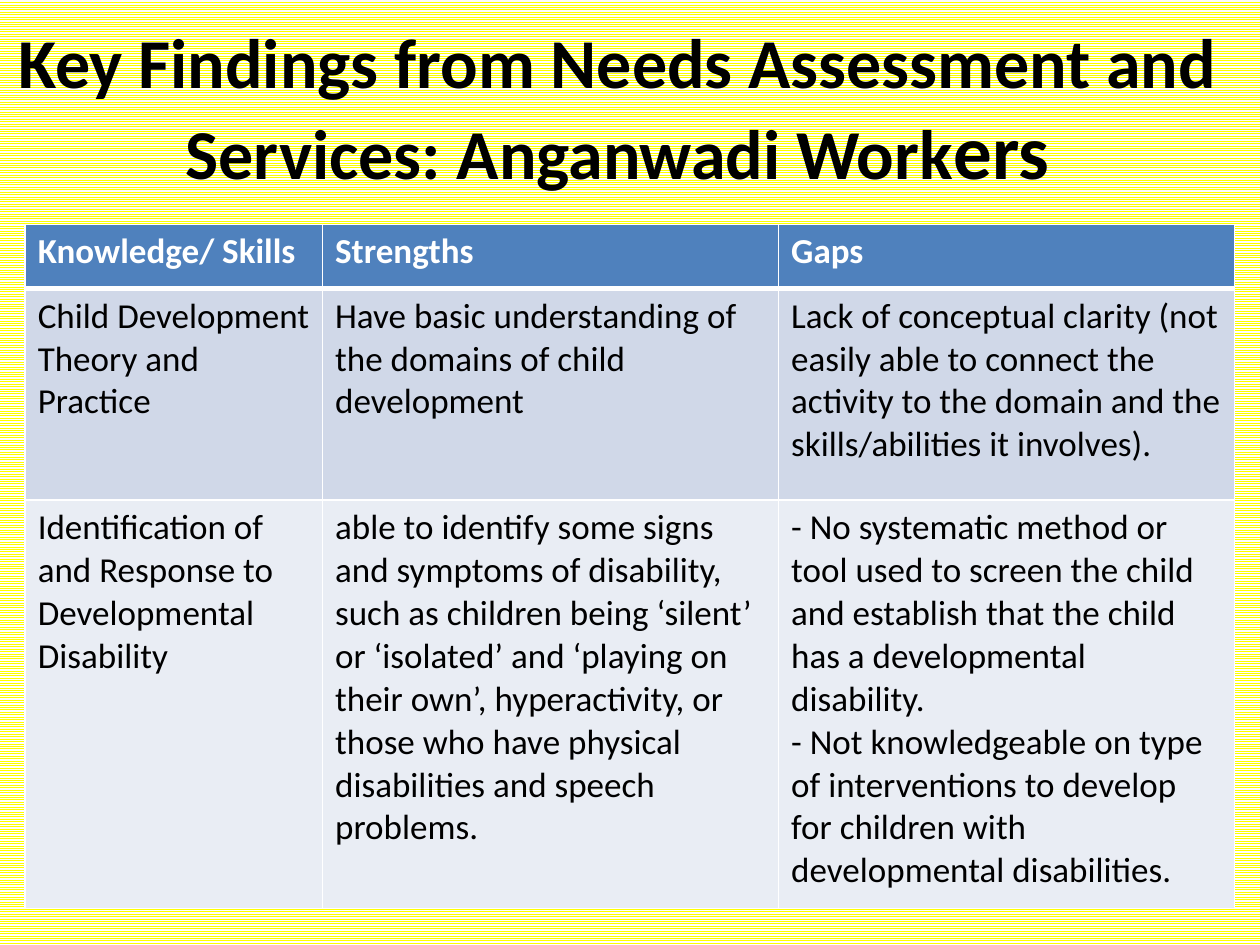
"""Build the slide on key findings about Anganwadi workers."""
import pptx
import pptx.dml.color
import pptx.enum.dml
import pptx.enum.text
import pptx.oxml
import pptx.oxml.ns
import pptx.util

Inches = pptx.util.Inches


def tint(code):
    return pptx.dml.color.RGBColor.from_string(code)


def write(para, text, size, color, bold):
    run = para.add_run()
    run.text = text
    run.font.name = "Calibri"
    run.font.size = pptx.util.Pt(size)
    run.font.bold = bold
    run.font.color.rgb = tint(color)


deck = pptx.Presentation()
deck.slide_width = Inches(10)
deck.slide_height = Inches(7.5)
slide = deck.slides.add_slide(deck.slide_layouts[6])

back = slide.background.fill
back.patterned()
back.pattern = pptx.enum.dml.MSO_PATTERN.NARROW_HORIZONTAL
back.fore_color.rgb = tint("FFFF00")
back.back_color.rgb = tint("FFFFFF")

title = slide.shapes.add_textbox(Inches(0), Inches(0), Inches(9.8), Inches(1.7))
frame = title.text_frame
frame.word_wrap = True
frame.vertical_anchor = pptx.enum.text.MSO_ANCHOR.MIDDLE
head = frame.paragraphs[0]
head.alignment = pptx.enum.text.PP_ALIGN.CENTER
write(head, "Key Findings from Needs Assessment and Services: Anganwadi Work", 40, "000000", True)
write(head, "ers", 44, "000000", True)

rows = [
    [["Knowledge/ Skills"], ["Strengths"], ["Gaps"]],
    [
        ["Child Development Theory and Practice"],
        ["Have basic understanding of the domains of child development"],
        ["Lack of conceptual clarity (not easily able to connect the activity "
         "to the domain and the skills/abilities it involves)."],
    ],
    [
        ["Identification of and Response to Developmental Disability"],
        ["able to identify some signs and symptoms of disability, such as children "
         "being ‘silent’ or ‘isolated’ and ‘playing on their own’, hyperactivity, "
         "or those who have physical disabilities and speech problems."],
        ["- No systematic method or tool used to screen the child and establish "
         "that the child has a developmental disability.",
         "- Not knowledgeable on type of interventions to develop for children "
         "with developmental disabilities."],
    ],
]
fills = ["4F81BD", "D0D8E8", "E9EDF4"]
inks = ["FFFFFF", "000000", "000000"]

table = slide.shapes.add_table(
    3, 3, Inches(0.2), Inches(1.78), Inches(9.6), Inches(5.43)).table
for col, width in zip(table.columns, [2.36, 3.62, 3.62]):
    col.width = Inches(width)
for row, height in zip(table.rows, [0.51, 1.68, 3.24]):
    row.height = Inches(height)

for r, row in enumerate(rows):
    for c, paras in enumerate(row):
        cell = table.cell(r, c)
        props = cell._tc.get_or_add_tcPr()
        for side in "LRTB":
            thick = (r, side) in [(0, "B"), (1, "T")]
            width = pptx.util.Pt(3 if thick else 1)
            props.append(pptx.oxml.parse_xml(
                f'<a:ln{side} {pptx.oxml.ns.nsdecls("a")} w="{width}"><a:solidFill>'
                f'<a:srgbClr val="FFFFFF"/></a:solidFill></a:ln{side}>'))
        cell.fill.solid()
        cell.fill.fore_color.rgb = tint(fills[r])
        body = cell.text_frame
        for i, text in enumerate(paras):
            para = body.add_paragraph() if i else body.paragraphs[0]
            write(para, text, 20, inks[r], r == 0)

deck.save("out.pptx")
